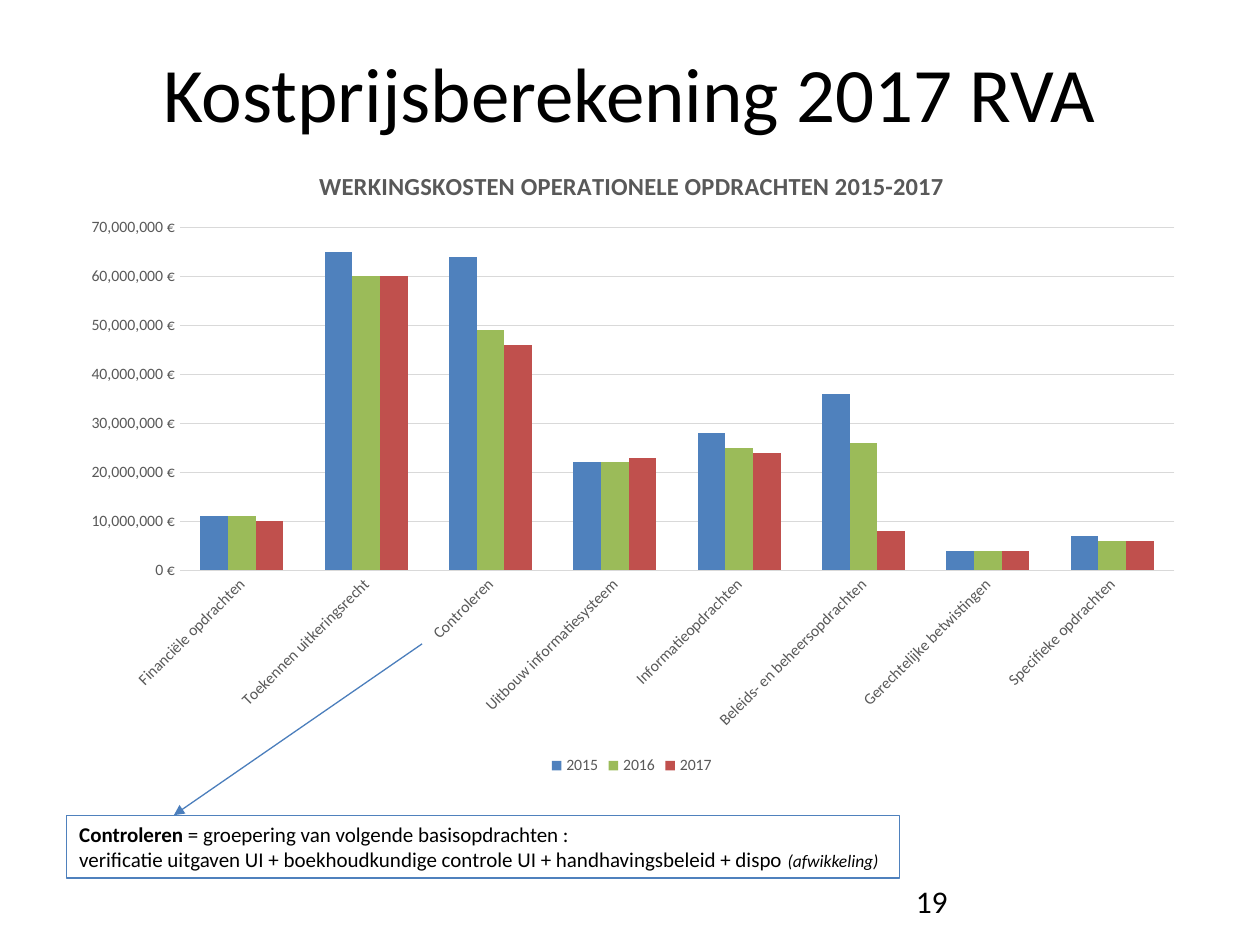
from lxml import etree
from pptx import Presentation
from pptx import util as u
from pptx.chart.data import CategoryChartData
from pptx.dml.color import RGBColor
from pptx.enum import chart as ch, shapes, text
from pptx.oxml import parse_xml
from pptx.oxml.ns import nsdecls, qn

HUES = {"ink": "000000", "grey": "595959", "grid": "D9D9D9", "edge": "4F81BD",
        "arrow": "4B7EBC", "2015": "4F81BD", "2016": "9BBB59", "2017": "C0504D"}


class Deck:
    """Holds the style and the current slide."""
    face = "Calibri"

    def __init__(self, wide, high):
        self.prs = Presentation()
        self.prs.slide_width, self.prs.slide_height = u.Inches(wide), u.Inches(high)
        self.slide = self.prs.slides.add_slide(self.prs.slide_layouts[6])

    def hue(self, name):
        return RGBColor.from_string(HUES[name])

    def style(self, font, size, hue="ink", bold=False, italic=False):
        font.name, font.size = self.face, u.Pt(size)
        font.bold, font.italic = bold, italic
        font.color.rgb = self.hue(hue)

    def fill(self, frame, lines, anchor, align):
        """Each line is a list of runs: (words, size, style options)."""
        frame.word_wrap = True
        frame.vertical_anchor = anchor
        for i, runs in enumerate(lines):
            para = frame.paragraphs[0] if i == 0 else frame.add_paragraph()
            para.alignment = align
            for words, size, opts in runs:
                run = para.add_run()
                run.text = words
                self.style(run.font, size, **opts)

    def label(self, at, lines, align=text.PP_ALIGN.LEFT):
        box = self.slide.shapes.add_textbox(*map(u.Inches, at))
        self.fill(box.text_frame, lines, text.MSO_ANCHOR.MIDDLE, align)

    def note(self, at, lines):
        box = self.slide.shapes.add_shape(
            shapes.MSO_SHAPE.RECTANGLE, *map(u.Inches, at))
        box.shadow.inherit = False
        box.fill.background()
        box.line.color.rgb, box.line.width = self.hue("edge"), u.Pt(0.75)
        self.fill(box.text_frame, lines, text.MSO_ANCHOR.TOP, text.PP_ALIGN.LEFT)

    def arrow(self, *ends):
        line = self.slide.shapes.add_connector(
            shapes.MSO_CONNECTOR.STRAIGHT, *map(u.Inches, ends))
        line.line.color.rgb, line.line.width = self.hue("arrow"), u.Pt(0.75)
        etree.SubElement(line.line._get_or_add_ln(), qn("a:tailEnd"), type="triangle")
        etree.SubElement(line._element.spPr, qn("a:effectLst"))

    def bars(self, at, title, cats, rows, plot):
        data = CategoryChartData(number_format='#,##0\\ "€"')
        data.categories = cats
        for name, vals in rows.items():
            data.add_series(name, [v * 1000000 for v in vals])
        chart = self.slide.shapes.add_chart(
            ch.XL_CHART_TYPE.COLUMN_CLUSTERED, *map(u.Inches, at), data).chart
        self.style(chart.font, 10)

        # Title and legend
        run = chart.chart_title.text_frame.paragraphs[0].add_run()
        run.text = title
        self.style(run.font, 14, "grey", bold=True)
        chart.chart_title.include_in_layout = False
        chart.has_legend = True
        chart.legend.position = ch.XL_LEGEND_POSITION.BOTTOM
        chart.legend.include_in_layout = False
        self.style(chart.legend.font, 9, "grey")

        # Axes
        for axis in (chart.category_axis, chart.value_axis):
            axis.major_tick_mark = axis.minor_tick_mark = ch.XL_TICK_MARK.NONE
            axis.format.line.fill.background()
            self.style(axis.tick_labels.font, 9, "grey")
        chart.category_axis._element.txPr.bodyPr.set("rot", "-2700000")
        axis = chart.value_axis
        axis.minimum_scale, axis.maximum_scale, axis.major_unit = 0, 70000000, 10000000
        axis.tick_labels.number_format = '#,##0\\ "€"'
        axis.tick_labels.number_format_is_linked = False
        grid = axis.major_gridlines.format.line
        grid.color.rgb, grid.width = self.hue("grid"), u.Pt(0.75)

        # Columns
        group = chart.plots[0]
        group.gap_width, group.overlap, group.vary_by_categories = 150, 0, False
        for row in group.series:
            row.format.fill.solid()
            row.format.fill.fore_color.rgb = self.hue(row.name)

        # Inner plot area, as shares of the chart
        area = chart._chartSpace.find(".//" + qn("c:plotArea"))
        for old in area.findall(qn("c:layout")):
            area.remove(old)
        parts = "".join(f'<c:{k} val="{v}"/>' for k, v in zip("xywh", plot))
        area.insert(0, parse_xml(
            f'<c:layout {nsdecls("c")}><c:manualLayout><c:layoutTarget val="inner"/>'
            f'<c:xMode val="edge"/><c:yMode val="edge"/>{parts}'
            '</c:manualLayout></c:layout>'))


def main():
    deck = Deck(10, 7.5)

    # Title and page number
    deck.label((0.5, 0.3, 9, 0.85), [[("Kostprijsberekening 2017 RVA", 44, {})]],
               text.PP_ALIGN.CENTER)
    deck.label((7.17, 6.95, 2.33, 0.4), [[("19", 18, {})]])

    # Costs per task, in millions of euros
    cats = ["Financiële opdrachten", "Toekennen uitkeringsrecht", "Controleren",
            "Uitbouw informatiesysteem", "Informatieopdrachten",
            "Beleids- en beheersopdrachten", "Gerechtelijke betwistingen",
            "Specifieke opdrachten"]
    rows = {"2015": (11, 65, 64, 22, 28, 36, 4, 7),
            "2016": (11, 60, 49, 22, 25, 26, 4, 6),
            "2017": (10, 60, 46, 23, 24, 8, 4, 6)}
    deck.bars((0.53, 1.15, 8.97, 5.04), "WERKINGSKOSTEN OPERATIONELE OPDRACHTEN 2015-2017",
              cats, rows, (0.1, 0.13, 0.88, 0.54))

    # Note on one task
    deck.arrow(3.35, 5.11, 1.38, 6.47)
    deck.note((0.53, 6.47, 6.61, 0.5), [
        [("Controleren", 12, {"bold": True}),
         (" = groepering van volgende basisopdrachten :", 12, {})],
        [("verificatie uitgaven UI + boekhoudkundige controle UI"
          " + handhavingsbeleid + dispo ", 12, {}),
         ("(afwikkeling)", 10, {"italic": True})]])

    deck.prs.save("out.pptx")


if __name__ == "__main__":
    main()
